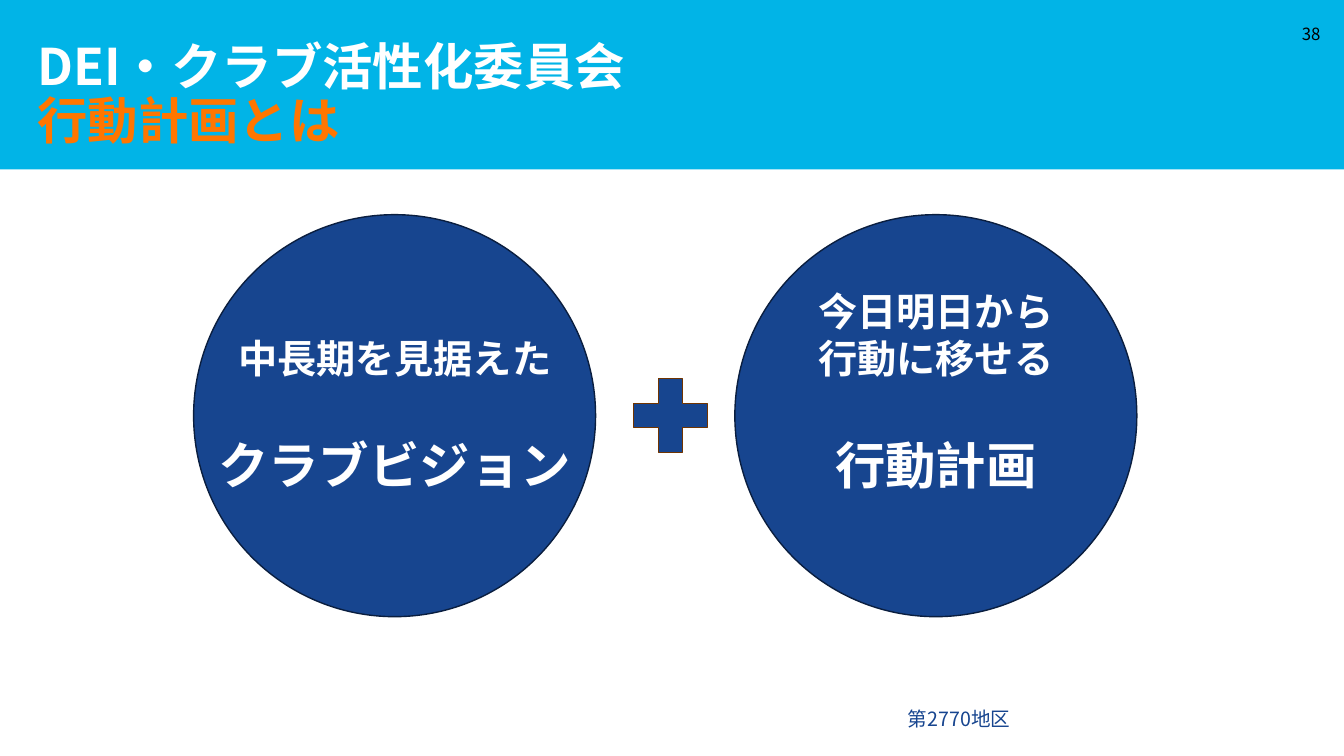
import pptx
import pptx.util
import pptx.dml.color
import pptx.enum.shapes
import pptx.enum.text
import pptx.oxml
import pptx.oxml.ns
from pptx.util import Cm

FONT = "Noto Sans CJK JP"
COLORS = {
    "sky": "01B4E7",
    "navy": "17458F",
    "navy_edge": "0A1E3F",
    "brown": "703400",
    "orange": "FF7600",
    "white": "FFFFFF",
    "black": "000000",
}
TITLE = ["DEI・クラブ活性化委員会", "行動計画とは"]
PAGE_NUMBER = "38"
DISTRICT = "第2770地区"
CIRCLES = [
    {"left": 4.88, "lead": ["中長期を見据えた"], "goal": "クラブビジョン"},
    {"left": 18.52, "lead": ["今日明日から", "行動に移せる"], "goal": "行動計画"},
]

SLIDE_WIDTH, SLIDE_HEIGHT = 33.87, 19.05
CIRCLE_TOP, CIRCLE_SIZE = 5.41, 10.13
LABEL_WIDTH, LABEL_HEIGHT, LABEL_BOTTOM = 9.88, 5.56, 12.59
PLUS_SIZE = 2.54

SHAPE = pptx.enum.shapes.MSO_SHAPE
ALIGN = pptx.enum.text.PP_ALIGN
ANCHOR = pptx.enum.text.MSO_ANCHOR


def rgb(name):
    return pptx.dml.color.RGBColor.from_string(COLORS[name])


def write(para, text, size, color, bold=False, align=ALIGN.LEFT, before=None, outline=None):
    para.alignment = align
    if before is not None:
        para.space_before = pptx.util.Pt(before)
    span = para.add_run()
    span.text = text
    span.font.size = pptx.util.Pt(size)
    span.font.bold = bold
    span.font.name = FONT
    span.font.color.rgb = rgb(color)
    properties = span.font._element
    east_asian = pptx.oxml.parse_xml(
        f'<a:ea {pptx.oxml.ns.nsdecls("a")} typeface="{FONT}"/>')
    properties.find(pptx.oxml.ns.qn("a:latin")).addnext(east_asian)
    if outline:
        properties.insert(0, pptx.oxml.parse_xml(
            f'<a:ln {pptx.oxml.ns.nsdecls("a")} w="9525"><a:solidFill>'
            f'<a:srgbClr val="{COLORS[outline]}"/></a:solidFill></a:ln>'))


def add_filled(slide, kind, left, top, width, height, fill, edge=None):
    shape = slide.shapes.add_shape(kind, Cm(left), Cm(top), Cm(width), Cm(height))
    shape.shadow.inherit = False
    shape.fill.solid()
    shape.fill.fore_color.rgb = rgb(fill)
    if edge:
        shape.line.color.rgb = rgb(edge)
        shape.line.width = pptx.util.Pt(1)
    else:
        shape.line.fill.background()


def add_box(slide, left, top, width, height, anchor=ANCHOR.TOP):
    box = slide.shapes.add_textbox(Cm(left), Cm(top), Cm(width), Cm(height))
    box.text_frame.word_wrap = True
    box.text_frame.vertical_anchor = anchor
    return box.text_frame


def add_title(slide):
    title = slide.shapes.title
    title.left, title.top, title.width, title.height = Cm(0.69), Cm(1.09), Cm(29.72), Cm(2.95)
    frame = title.text_frame
    frame.word_wrap = True
    frame.auto_size = pptx.enum.text.MSO_AUTO_SIZE.NONE
    frame.vertical_anchor = ANCHOR.BOTTOM
    frame.margin_left = frame.margin_right = frame.margin_bottom = Cm(0.25)
    frame.margin_top = 0
    para = frame.paragraphs[0]
    para.line_spacing = 0.9
    write(para, TITLE[0], 36, "white", bold=True)
    para.add_line_break()
    write(para, TITLE[1], 36, "orange", bold=True, outline="white")


def add_label(slide, circle):
    left = circle["left"] + (CIRCLE_SIZE - LABEL_WIDTH) / 2
    frame = add_box(slide, left, LABEL_BOTTOM - LABEL_HEIGHT, LABEL_WIDTH, LABEL_HEIGHT,
                    ANCHOR.BOTTOM)
    for index, line in enumerate(circle["lead"]):
        para = frame.add_paragraph() if index else frame.paragraphs[0]
        write(para, line, 28, "white", bold=True, align=ALIGN.CENTER)
    write(frame.add_paragraph(), circle["goal"], 36, "white", bold=True,
          align=ALIGN.CENTER, before=38)


def main():
    deck = pptx.Presentation()
    deck.slide_width, deck.slide_height = Cm(SLIDE_WIDTH), Cm(SLIDE_HEIGHT)
    slide = deck.slides.add_slide(deck.slide_layouts[5])

    add_filled(slide, SHAPE.RECTANGLE, 0, 0, SLIDE_WIDTH, 4.27, "sky")
    banner = slide.shapes[-1]
    slide.shapes.title._element.addprevious(banner._element)
    add_title(slide)

    for circle in CIRCLES:
        add_filled(slide, SHAPE.OVAL, circle["left"], CIRCLE_TOP, CIRCLE_SIZE, CIRCLE_SIZE,
                   "navy", "navy_edge")
        add_label(slide, circle)

    middle = (CIRCLES[0]["left"] + CIRCLES[1]["left"] + CIRCLE_SIZE) / 2
    add_filled(slide, SHAPE.MATH_PLUS, middle - PLUS_SIZE / 2 + 0.13,
               CIRCLE_TOP + (CIRCLE_SIZE - PLUS_SIZE) / 2, PLUS_SIZE, PLUS_SIZE,
               "navy", "brown")

    number = add_box(slide, 32.36, 0.33, 1.17, 1.02, ANCHOR.MIDDLE)
    write(number.paragraphs[0], PAGE_NUMBER, 12, "black", align=ALIGN.RIGHT)
    district = add_box(slide, 22.63, 17.7, 3.12, 0.86)
    write(district.paragraphs[0], DISTRICT, 14, "navy")

    deck.save("out.pptx")


if __name__ == "__main__":
    main()
